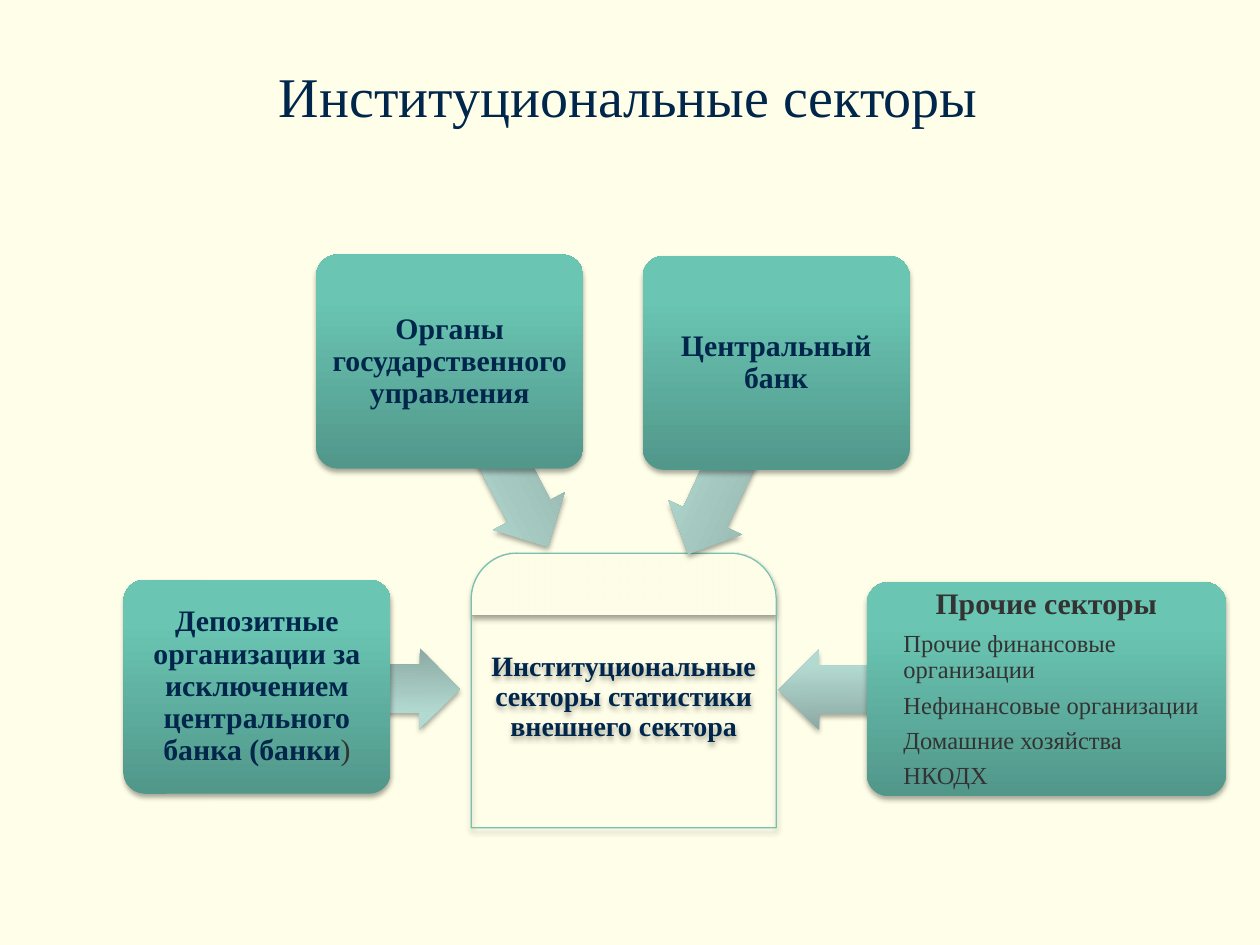
from lxml.etree import SubElement
from pptx import Presentation
from pptx.dml.color import RGBColor
from pptx.enum.shapes import MSO_SHAPE
from pptx.enum.text import MSO_ANCHOR, PP_ALIGN
from pptx.oxml import parse_xml
from pptx.oxml.ns import nsdecls, qn
from pptx.util import Inches, Pt

FONT = "Times New Roman"
NAVY, GREY, CREAM = "00264C", "333333", "FFFFE9"
# Gradient stops: position, colour, opacity (all in percent, bottom to top)
TEAL = [(0, "51978A", 100), (80, "6AC5B3", 100), (100, "69C7B5", 100)]
PALE = [(0, "8AA8A1", 100), (80, "B3DAD1", 100), (100, "B3DBD2", 100)]
CLEAR = [(77, "000000", 0), (77, CREAM, 100), (78, CREAM, 100)]


def color(code):
    return RGBColor.from_string(code)


def add_shade(parent, blur=3.1, dist=1.8, angle=90, alpha=35):
    node = SubElement(parent, qn("a:outerShdw"), blurRad=str(Pt(blur)), dist=str(Pt(dist)),
                      dir=str(angle * 60000), rotWithShape="0")
    tone = SubElement(node, qn("a:srgbClr"), val="000000")
    SubElement(tone, qn("a:alpha"), val=str(alpha * 1000))


def add_text(frame, text, size=17, fill=NAVY, bold=True, align=PP_ALIGN.CENTER,
             indent=0, after=6, lines=0.9, first=False):
    para = frame.paragraphs[0] if first else frame.add_paragraph()
    if indent:
        para._p.get_or_add_pPr().set("marL", str(Inches(indent)))
    para.alignment, para.line_spacing, para.space_after = align, lines, Pt(after)
    return add_run(para, text, size, fill, bold)


def add_run(para, text, size, fill, bold):
    run = para.add_run()
    run.text = text
    font = run.font
    font.name, font.size, font.bold = FONT, Pt(size), bold
    font.color.rgb = color(fill)
    return run


def add_part(slide, kind, box, stops, line=None, turn=0):
    shape = slide.shapes.add_shape(kind, *map(Inches, box))
    shape.rotation = turn
    if line:
        shape.line.color.rgb, shape.line.width = color(line), Pt(0.75)
    else:
        shape.line.fill.background()
    shape.shadow.inherit = False
    props = shape._element.spPr
    add_shade(props.find(qn("a:effectLst")))
    # Linear gradient running upwards
    grad = parse_xml(f'<a:gradFill rotWithShape="1" {nsdecls("a")}><a:gsLst/>'
                     '<a:lin ang="16200000" scaled="0"/></a:gradFill>')
    for pos, code, alpha in stops:
        stop = SubElement(grad[0], qn("a:gs"), pos=str(pos * 1000))
        tone = SubElement(stop, qn("a:srgbClr"), val=code)
        if alpha < 100:
            SubElement(tone, qn("a:alpha"), val=str(alpha * 1000))
    props.find(qn("a:prstGeom")).addnext(grad)
    return shape


def set_frame(shape, inset):
    frame = shape.text_frame
    frame.word_wrap, frame.vertical_anchor = True, MSO_ANCHOR.MIDDLE
    frame.margin_left = frame.margin_right = Inches(inset)
    frame.margin_top = frame.margin_bottom = Inches(inset)
    return frame


def add_title(slide, box, text):
    title = slide.shapes.title
    title.left, title.top, title.width, title.height = map(Inches, box)
    frame = title.text_frame
    frame.vertical_anchor = MSO_ANCHOR.BOTTOM
    run = add_text(frame, text, size=32, bold=False, after=0, lines=1, first=True)
    fill = run._r.rPr.find(qn("a:solidFill"))
    glow = parse_xml(f'<a:effectLst {nsdecls("a")}/>')
    fill.addnext(glow)
    add_shade(glow, blur=3, dist=3, angle=45, alpha=43)


def add_hub(slide, box, text):
    hub = add_part(slide, MSO_SHAPE.ROUND_2_SAME_RECTANGLE, box, CLEAR, line="78C0B2")
    add_text(set_frame(hub, 0.01), text, size=16, first=True)


def add_arrow(slide, box, turn):
    arrow = add_part(slide, MSO_SHAPE.LEFT_ARROW, box, PALE, turn=turn)
    arrow.adjustments[0], arrow.adjustments[1] = 0.6, 0.5


def add_card(slide, box, text, fill=NAVY, tail="", items=()):
    card = add_part(slide, MSO_SHAPE.ROUNDED_RECTANGLE, box, TEAL)
    card.adjustments[0] = 0.1
    frame = set_frame(card, 0.04)
    add_text(frame, text, fill=fill, first=True)
    if tail:
        add_run(frame.paragraphs[0], tail, 17, GREY, False)
    for item in items:
        add_text(frame, item, size=14, fill=GREY, bold=False,
                 align=PP_ALIGN.LEFT, indent=0.2, after=5)


def main():
    deck = Presentation()
    deck.slide_width, deck.slide_height = Inches(10), Inches(7.5)
    slide = deck.slides.add_slide(deck.slide_layouts[5])
    back = slide.background.fill
    back.solid()
    back.fore_color.rgb = color(CREAM)

    add_title(slide, (0.28, 0.31, 9.42, 0.76), "Институциональные секторы")
    add_hub(slide, (3.74, 4.39, 2.42, 2.18),
            "Институциональные секторы статистики внешнего сектора")

    # Sectors: each arrow lies behind its own card
    wide, high = 2.12, 1.7
    sectors = [
        ((2.04, 5.14, 1.61, 0.64), 180.7, (0.98, 4.6, wide, high),
         dict(text="Депозитные организации за исключением центрального банка (банки",
              tail=")")),
        ((3.19, 3.32, 1.58, 0.64), 242.3, (2.51, 2.02, wide, high),
         dict(text="Органы государственного управления")),
        ((4.98, 3.32, 1.67, 0.64), 295, (5.1, 2.03, wide, high),
         dict(text="Центральный банк")),
        ((6.18, 5.15, 2.22, 0.64), 359.7, (6.88, 4.62, 2.85, high),
         dict(text="Прочие секторы", fill=GREY,
              items=("Прочие финансовые организации", "Нефинансовые организации",
                     "Домашние хозяйства", "НКОДХ"))),
    ]
    for arrow, turn, card, words in sectors:
        add_arrow(slide, arrow, turn)
        add_card(slide, card, **words)

    deck.save("out.pptx")


if __name__ == "__main__":
    main()
